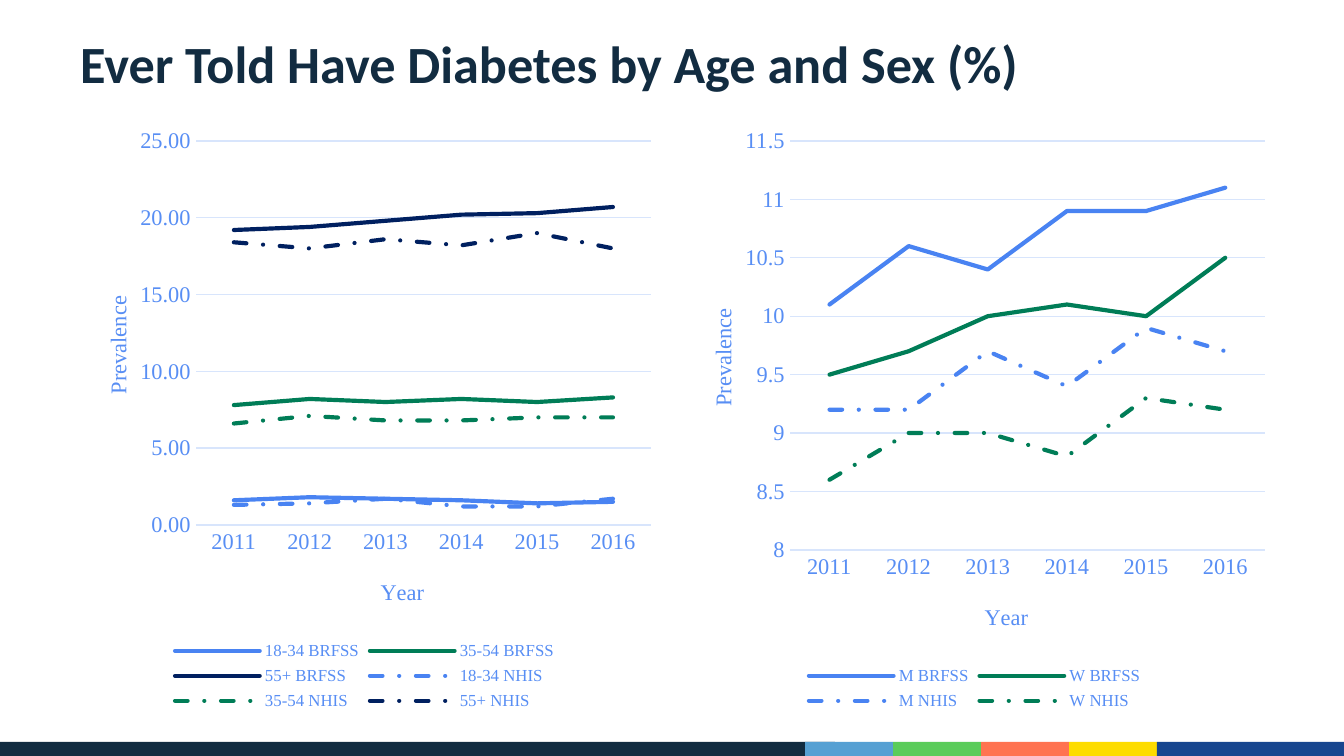
from dataclasses import dataclass

from lxml import etree
from pptx import Presentation, util as u
from pptx.chart import data as chart_data
from pptx.dml.color import RGBColor
from pptx.enum import chart as charts, dml, shapes, text
from pptx.oxml.ns import qn

PX = 914400 / 134.4  # EMU in one px
YEARS = [str(year) for year in range(2011, 2017)]


@dataclass(frozen=True)
class Theme:
    navy: str = "122C41"
    label: str = "588EF4"
    grid: str = "D8E5FC"
    blue: str = "4983F2"
    green: str = "007D57"
    dark: str = "002060"
    title_font: str = "Calibri"
    chart_font: str = "Times New Roman"
    title_size: int = 28
    axis_size: int = 12
    legend_size: int = 9
    grid_width: float = 0.75
    series_width: float = 2.25


@dataclass(frozen=True)
class Rect:
    left: int
    top: int
    width: int
    height: int

    def emu(self) -> list[u.Emu]:
        return [px(n) for n in (self.left, self.top, self.width, self.height)]


@dataclass(frozen=True)
class Series:
    name: str
    color: str
    values: list[float]

    @property
    def dashed(self) -> bool:
        return self.name.endswith("NHIS")


@dataclass(frozen=True)
class LineChart:
    frame: Rect
    plot: Rect
    low: float
    high: float
    step: float
    number_format: str
    series: list[Series]


@dataclass(frozen=True)
class Band:
    left: int
    width: int
    color: str


THEME = Theme()
BANDS = [Band(0, 835, THEME.navy)] + [
    Band(805 + 88 * i, 88, color)
    for i, color in enumerate(["56A0D3", "5ACC5A", "FF7351", "FDDC00"])
] + [Band(1157, 187, "17468F")]

BY_AGE = LineChart(
    Rect(67, 117, 595, 599), Rect(196, 141, 455, 384), 0, 25, 5, "0.00",
    [
        Series("18-34 BRFSS", THEME.blue, [1.6, 1.8, 1.7, 1.6, 1.4, 1.5]),
        Series("35-54 BRFSS", THEME.green, [7.8, 8.2, 8, 8.2, 8, 8.3]),
        Series("55+ BRFSS", THEME.dark, [19.2, 19.4, 19.8, 20.2, 20.3, 20.7]),
        Series("18-34 NHIS", THEME.blue, [1.3, 1.4, 1.7, 1.2, 1.2, 1.7]),
        Series("35-54 NHIS", THEME.green, [6.6, 7.1, 6.8, 6.8, 7, 7]),
        Series("55+ NHIS", THEME.dark, [18.4, 18, 18.6, 18.2, 19, 18]),
    ],
)
BY_SEX = LineChart(
    Rect(672, 117, 605, 599), Rect(790, 141, 475, 409), 8, 11.5, 0.5, "General",
    [
        Series("M BRFSS", THEME.blue, [10.1, 10.6, 10.4, 10.9, 10.9, 11.1]),
        Series("W BRFSS", THEME.green, [9.5, 9.7, 10, 10.1, 10, 10.5]),
        Series("M NHIS", THEME.blue, [9.2, 9.2, 9.7, 9.4, 9.9, 9.7]),
        Series("W NHIS", THEME.green, [8.6, 9, 9, 8.8, 9.3, 9.2]),
    ],
)


def px(n: int) -> u.Emu:
    return u.Emu(round(n * PX))


def rgb(color: str) -> RGBColor:
    return RGBColor.from_string(color)


def set_font(font, name: str, size: int, color: str, bold: bool = False) -> None:
    font.name, font.size, font.bold = name, u.Pt(size), bold
    font.color.rgb = rgb(color)


def set_line(line, color: str, width: float) -> None:
    line.color.rgb = rgb(color)
    line.width = u.Pt(width)


def set_layout(element, index: int, values: dict[str, str | float]) -> None:
    """Give a chart part a manual layout, as its child at the index."""
    for old in element.findall(qn("c:layout")):
        element.remove(old)
    layout = etree.Element(qn("c:layout"))
    manual = etree.SubElement(layout, qn("c:manualLayout"))
    for tag, value in values.items():
        etree.SubElement(manual, qn(f"c:{tag}"), val=str(value))
    element.insert(index, layout)


def place(frame: Rect, left: float, top: float) -> dict[str, str | float]:
    """Turn a slide position into fractions of the chart frame."""
    return {"xMode": "edge", "yMode": "edge",
            "x": round((left - frame.left) / frame.width, 4),
            "y": round((top - frame.top) / frame.height, 4)}


def style_axis(axis, title: str, position: dict[str, str | float]) -> None:
    axis.major_tick_mark = axis.minor_tick_mark = charts.XL_TICK_MARK.NONE
    set_font(axis.tick_labels.font, THEME.chart_font, THEME.axis_size, THEME.label)
    frame = axis.axis_title.text_frame
    frame.text = title
    set_font(frame.paragraphs[0].font, THEME.chart_font, THEME.axis_size, THEME.label)
    set_layout(axis.axis_title._element, 1, position)


def add_line_chart(page, item: LineChart) -> None:
    source = chart_data.CategoryChartData(number_format=item.number_format)
    source.categories = YEARS
    for series in item.series:
        source.add_series(series.name, series.values)
    chart = page.shapes.add_chart(
        charts.XL_CHART_TYPE.LINE, *item.frame.emu(), source).chart
    chart.has_title = False
    set_font(chart.font, THEME.chart_font, THEME.axis_size, THEME.label)

    frame, plot = item.frame, item.plot
    set_layout(chart._chartSpace.chart.plotArea, 0, {
        "layoutTarget": "inner", **place(frame, plot.left, plot.top),
        "w": round(plot.width / frame.width, 4),
        "h": round(plot.height / frame.height, 4)})

    years, values = chart.category_axis, chart.value_axis
    style_axis(years, "Year", place(
        frame, plot.left + plot.width / 2 - 47, plot.top + plot.height + 49))
    set_line(years.format.line, THEME.grid, THEME.grid_width)
    style_axis(values, "Prevalence", place(
        frame, frame.left + 33, plot.top + plot.height / 2 - 41))
    values.format.line.fill.background()
    values.minimum_scale, values.maximum_scale = item.low, item.high
    values.major_unit = item.step
    values.tick_labels.number_format = item.number_format
    values.tick_labels.number_format_is_linked = False
    set_line(values.major_gridlines.format.line, THEME.grid, THEME.grid_width)

    chart.has_legend = True
    chart.legend.position = charts.XL_LEGEND_POSITION.BOTTOM
    chart.legend.include_in_layout = False
    set_font(chart.legend.font, THEME.chart_font, THEME.legend_size, THEME.label)

    chart.plots[0].vary_by_categories = False
    for drawn, series in zip(chart.plots[0].series, item.series):
        drawn.smooth = False
        line = drawn.format.line
        set_line(line, series.color, THEME.series_width)
        line._get_or_add_ln().set("cap", "rnd")
        if series.dashed:
            line.dash_style = dml.MSO_LINE.DASH_DOT


def add_band(page, band: Band) -> None:
    box = page.shapes.add_shape(
        shapes.MSO_SHAPE.RECTANGLE, *Rect(band.left, 742, band.width, 14).emu())
    box.shadow.inherit = False
    box.fill.solid()
    box.fill.fore_color.rgb = rgb(band.color)
    box.line.fill.background()


def add_title(page, words: str) -> None:
    frame = page.shapes.add_textbox(*Rect(67, 31, 1210, 126).emu()).text_frame
    frame.word_wrap = True
    frame.vertical_anchor = text.MSO_ANCHOR.TOP
    para = frame.paragraphs[0]
    para.text = words
    para.line_spacing = u.Pt(30)
    set_font(para.font, THEME.title_font, THEME.title_size, THEME.navy, bold=True)


def main() -> None:
    deck = Presentation()
    deck.slide_width, deck.slide_height = px(1344), px(756)
    page = deck.slides.add_slide(deck.slide_layouts[6])
    for band in BANDS:
        add_band(page, band)
    add_title(page, "Ever Told Have Diabetes by Age and Sex (%)")
    for item in (BY_AGE, BY_SEX):
        add_line_chart(page, item)
    deck.save("out.pptx")


if __name__ == "__main__":
    main()
